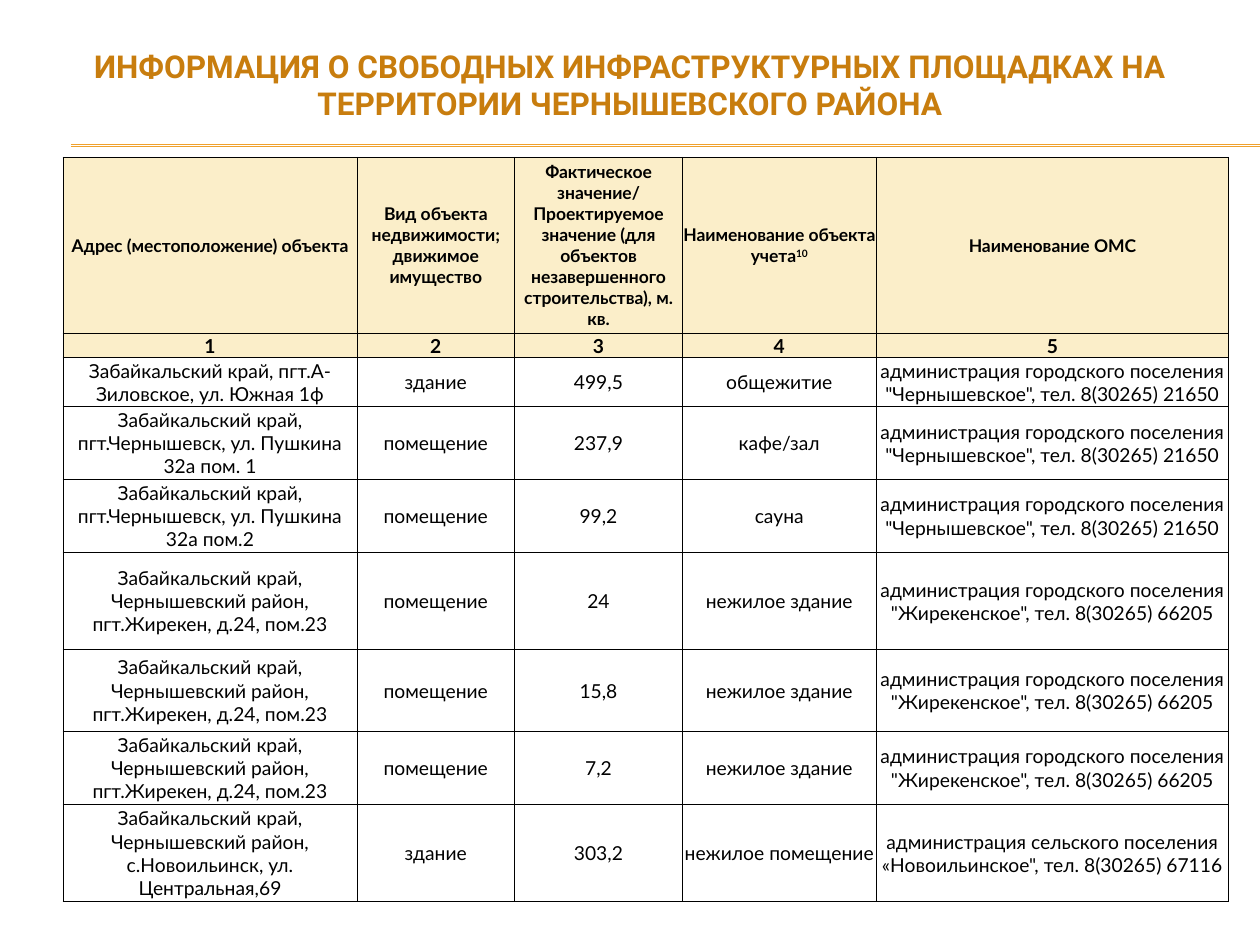
from lxml import etree
from pptx import Presentation
from pptx.dml.color import RGBColor
from pptx.enum import shapes, text
from pptx.oxml import ns
from pptx.util import Cm, Pt

# Content
TITLE = ("ИНФОРМАЦИЯ О СВОБОДНЫХ ИНФРАСТРУКТУРНЫХ ПЛОЩАДКАХ "
         "НА ТЕРРИТОРИИ ЧЕРНЫШЕВСКОГО РАЙОНА")
HEADERS = [
    "Адрес (местоположение) объекта",
    "Вид объекта недвижимости; движимое имущество",
    "Фактическое значение/ Проектируемое значение "
    "(для объектов незавершенного строительства), м. кв.",
    "Наименование объекта учета",
    "Наименование ОМС",
]
FOOTNOTE_COLUMN, FOOTNOTE_MARK = 3, "10"
NUMBERS = ["1", "2", "3", "4", "5"]

CHERNYSHEVSKOE = 'администрация городского поселения "Чернышевское", тел. 8(30265) 21650'
ZHIREKENSKOE = 'администрация городского поселения "Жирекенское", тел. 8(30265) 66205'
NOVOILINSKOE = 'администрация сельского поселения «Новоильинское", тел. 8(30265) 67116'
PUSHKINA = "Забайкальский край, пгт.Чернышевск, ул. Пушкина 32а "
ZHIREKEN = "Забайкальский край, Чернышевский район, пгт.Жирекен, д.24, пом.23"
NOVOILINSK = "Забайкальский край, Чернышевский район, с.Новоильинск, ул. Центральная,69"
SITES = [
    ("Забайкальский край, пгт.А-Зиловское, ул. Южная 1ф",
     "здание", "499,5", "общежитие", CHERNYSHEVSKOE),
    (PUSHKINA + "пом. 1", "помещение", "237,9", "кафе/зал", CHERNYSHEVSKOE),
    (PUSHKINA + "пом.2", "помещение", "99,2", "сауна", CHERNYSHEVSKOE),
    (ZHIREKEN, "помещение", "24", "нежилое здание", ZHIREKENSKOE),
    (ZHIREKEN, "помещение", "15,8", "нежилое здание", ZHIREKENSKOE),
    (ZHIREKEN, "помещение", "7,2", "нежилое здание", ZHIREKENSKOE),
    (NOVOILINSK, "здание", "303,2", "нежилое помещение", NOVOILINSKOE),
]
ROWS = [HEADERS, NUMBERS, *SITES]

# Layout in centimetres, and style
COLUMN_WIDTHS = [5.93, 3.17, 3.39, 3.9, 7.11]
ROW_HEIGHTS = [3.56, 0.48, 0.99, 1.47, 1.47, 1.96, 1.65, 1.47, 1.96]
RULE_LEFT, RULE_TOPS = 1.43, (2.92, 2.95)
ORANGE = RGBColor(0xC8, 0x7D, 0x0E)
AMBER = RGBColor(0xF0, 0xA2, 0x2E)
CREAM = RGBColor(0xFB, 0xEE, 0xC9)
BLACK = RGBColor(0, 0, 0)
WHITE = RGBColor(0xFF, 0xFF, 0xFF)


def format_text(para, name, size, color, bold):
    para.alignment = text.PP_ALIGN.CENTER
    para.font.name = name
    para.font.size = Pt(size)
    para.font.bold = bold
    para.font.color.rgb = color


def add_borders(cell):
    """Draw thin black borders; they must precede the fill in the XML."""
    properties = cell._tc.get_or_add_tcPr()
    for index, side in enumerate(("lnL", "lnR", "lnT", "lnB")):
        border = etree.Element(ns.qn(f"a:{side}"), w=str(Pt(0.5)))
        fill = etree.SubElement(border, ns.qn("a:solidFill"))
        etree.SubElement(fill, ns.qn("a:srgbClr"), val=str(BLACK))
        properties.insert(index, border)


deck = Presentation()
deck.slide_width, deck.slide_height = Cm(25.4), Cm(19.05)
page = deck.slides.add_slide(deck.slide_layouts[5])

# Title
title = page.shapes.title
title.left, title.top, title.width, title.height = Cm(1.27), Cm(0.43), Cm(22.86), Cm(2.54)
title.text_frame.text = TITLE
title.text_frame.vertical_anchor = text.MSO_ANCHOR.MIDDLE
format_text(title.text_frame.paragraphs[0], "Roboto", 18, ORANGE, True)

# Double rule under the title
for top in RULE_TOPS:
    rule = page.shapes.add_connector(
        shapes.MSO_CONNECTOR.STRAIGHT, Cm(RULE_LEFT), Cm(top), deck.slide_width, Cm(top))
    rule.line.color.rgb = AMBER
    rule.line.width = Pt(0.75)
    etree.SubElement(rule._element.spPr, ns.qn("a:effectLst"))

# Table of sites
table = page.shapes.add_table(
    len(ROWS), len(HEADERS), Cm(1.27), Cm(3.17),
    Cm(sum(COLUMN_WIDTHS)), Cm(sum(ROW_HEIGHTS))).table
for column, width in zip(table.columns, COLUMN_WIDTHS):
    column.width = Cm(width)
for row, height in zip(table.rows, ROW_HEIGHTS):
    row.height = Cm(height)

for row_index, values in enumerate(ROWS):
    is_heading = row_index < 2
    for column_index, value in enumerate(values):
        cell = table.cell(row_index, column_index)
        cell.margin_left = cell.margin_right = cell.margin_top = cell.margin_bottom = 0
        cell.vertical_anchor = text.MSO_ANCHOR.MIDDLE
        cell.fill.solid()
        cell.fill.fore_color.rgb = CREAM if is_heading else WHITE
        add_borders(cell)
        cell.text = value
        format_text(cell.text_frame.paragraphs[0], "Lato",
                    10 if row_index == 0 else 11, BLACK, is_heading)

# Superscript footnote mark in the header
mark = table.cell(0, FOOTNOTE_COLUMN).text_frame.paragraphs[0].add_run()
mark.text = FOOTNOTE_MARK
mark._r.get_or_add_rPr().set("baseline", "30000")

deck.save("out.pptx")
